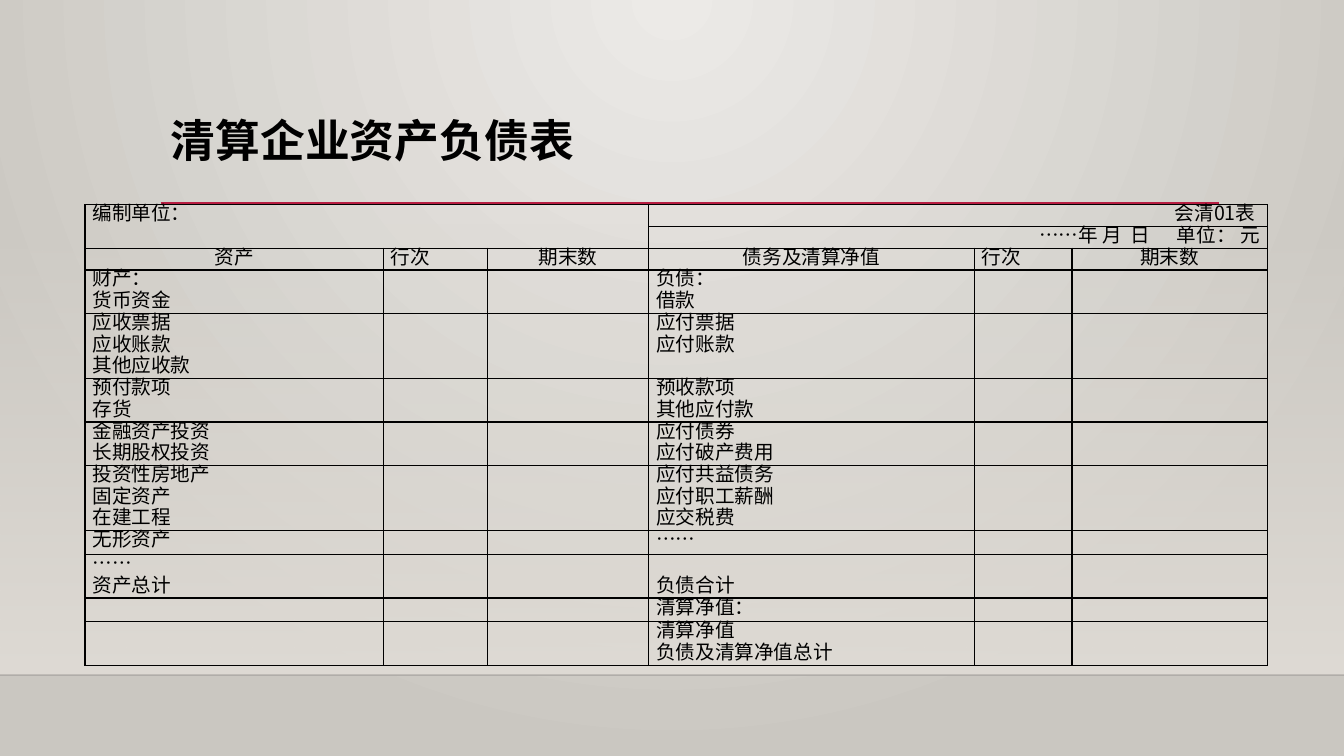
from lxml.etree import SubElement
from pptx import Presentation
from pptx.dml.color import RGBColor
from pptx.enum.shapes import MSO_CONNECTOR, MSO_SHAPE
from pptx.enum.text import MSO_ANCHOR, MSO_AUTO_SIZE, PP_ALIGN
from pptx.oxml.ns import qn
from pptx.util import Pt

PX = 9525
FACE = "Noto Sans CJK SC"
HUES = {
    "ink": "000000",
    "glow": "ECEAE7",
    "edge": "CAC7C1",
    "wall": "DFDBD5",
    "floor": "000001",
    "red": "B71E42",
}
COLS = [284, 99, 154, 310, 93, 186]
HEADS = ["资产", "行次", "期末数", "债务及清算净值", "行次", "期末数"]
ITEMS = [
    (["财产：", "货币资金"], ["负债：", "借款"]),
    (["应收票据", "应收账款", "其他应收款"], ["应付票据", "应付账款"]),
    (["预付款项", "存货"], ["预收款项", "其他应付款"]),
    (["金融资产投资", "长期股权投资"], ["应付债券", "应付破产费用"]),
    (["投资性房地产", "固定资产", "在建工程"], ["应付共益债务", "应付职工薪酬", "应交税费"]),
    (["无形资产"], ["……"]),
    (["……", "资产总计"], ["负债合计"]),
    ([], ["清算净值："]),
    ([], ["清算净值", "负债及清算净值总计"]),
]
DATE = [("……年 月", 0), (" ", 300), ("日", 0), (" ", 1570), ("单位： 元", 0)]


def hue(name):
    return RGBColor.from_string(HUES[name])


def add_run(par, text, size, bold=False, gap=0):
    run = par.add_run()
    run.text = text
    font = run.font
    font.size, font.bold, font.name = Pt(size), bold, FACE
    font.color.rgb = hue("ink")
    props = run._r.get_or_add_rPr()
    SubElement(props, qn("a:ea"), typeface=FACE)
    if gap:
        props.set("spc", str(gap))


def blend(fill, first, last):
    fill.gradient()
    for stop, name, place in zip(fill.gradient_stops, (first, last), (0, 1)):
        stop.color.rgb = hue(name)
        stop.position = place


def fade(node, share):
    tint = next(node.iter(qn("a:srgbClr")))
    SubElement(tint, qn("a:alpha"), val=str(share * 1000))


def draw_rule(slide, left, top, width, name, weight):
    rule = slide.shapes.add_connector(
        MSO_CONNECTOR.STRAIGHT, left * PX, top * PX, (left + width) * PX, top * PX)
    rule.line.color.rgb = hue(name)
    rule.line.width = Pt(weight)
    SubElement(rule.element.spPr, qn("a:effectLst"))
    return rule


def draw_scene(slide, width, base):
    blend(slide.background.fill, "glow", "edge")
    lin = next(slide.element.iter(qn("a:lin")))
    grad = lin.getparent()
    grad.remove(lin)
    ring = SubElement(grad, qn("a:path"), path="circle")
    SubElement(ring, qn("a:fillToRect"), l="43000", t="0", r="43000", b="100000")
    top = 212
    wall = slide.shapes.add_shape(
        MSO_SHAPE.RECTANGLE, 0, top * PX, width * PX, (base - top) * PX)
    wall.shadow.inherit = False
    wall.line.fill.background()
    blend(wall.fill, "wall", "wall")
    wall.fill.gradient_angle = 270
    fade(wall.element.spPr, 0)
    floor = draw_rule(slide, 0, base, width, "floor", 1)
    fade(floor.element.spPr, 20)


def draw_title(slide, left, top, width, height):
    draw_rule(slide, left, top + height + 26, width, "red", 2.5)
    title = slide.shapes.title
    slide.shapes.element.append(title.element)
    title.left, title.top = left * PX, top * PX
    title.width, title.height = width * PX, height * PX
    frame = title.text_frame
    frame.auto_size = MSO_AUTO_SIZE.NONE
    frame.word_wrap = True
    frame.vertical_anchor = MSO_ANCHOR.BOTTOM
    frame.margin_bottom = 9 * PX
    par = frame.paragraphs[0]
    par.alignment = PP_ALIGN.LEFT
    par.line_spacing = 0.9
    add_run(par, "清算企业资产负债表", 32, True)


def style_cell(cell):
    cell.margin_left = cell.margin_right = 7 * PX
    cell.margin_top = cell.margin_bottom = 0
    props = cell._tc.get_or_add_tcPr()
    for side in ("lnL", "lnR", "lnT", "lnB"):
        line = SubElement(props, qn("a:" + side), w=str(Pt(1)))
        fill = SubElement(line, qn("a:solidFill"))
        SubElement(fill, qn("a:srgbClr"), val=HUES["ink"])
    cell.fill.background()


def fill_cell(cell, lines, align):
    frame = cell.text_frame
    for spot, runs in enumerate(lines or [[]]):
        par = frame.add_paragraph() if spot else frame.paragraphs[0]
        par.alignment = align
        par.line_spacing = Pt(15.5)
        for text, gap in runs:
            add_run(par, text, 14, gap=gap)
        if not runs:
            SubElement(par._p, qn("a:endParaRPr"), sz="1400")


def plain(lines):
    return [[(text, 0)] for text in lines]


def draw_sheet(slide, left, top):
    sizes = [1, 1, 1] + [max(map(len, pair)) for pair in ITEMS]
    highs = [62 * size // 3 for size in sizes]
    frame = slide.shapes.add_table(
        len(highs), len(COLS), left * PX, top * PX, sum(COLS) * PX, sum(highs) * PX)
    table = frame.table
    table.first_row = table.horz_banding = False
    for col, width in zip(table.columns, COLS):
        col.width = width * PX
    for row, high in zip(table.rows, highs):
        row.height = high * PX
        for cell in row.cells:
            style_cell(cell)
    for start, end in (((0, 0), (1, 2)), ((0, 3), (0, 5)), ((1, 3), (1, 5))):
        table.cell(*start).merge(table.cell(*end))
    fill_cell(table.cell(0, 0), plain(["编制单位："]), PP_ALIGN.LEFT)
    fill_cell(table.cell(0, 3), plain(["会清01表 "]), PP_ALIGN.RIGHT)
    fill_cell(table.cell(1, 3), [DATE], PP_ALIGN.RIGHT)
    for col, head in enumerate(HEADS):
        align = PP_ALIGN.JUSTIFY if head == "行次" else PP_ALIGN.CENTER
        fill_cell(table.cell(2, col), plain([head]), align)
    for row, (assets, debts) in enumerate(ITEMS, 3):
        for col, lines in enumerate((assets, [], [], debts, [], [])):
            cell = table.cell(row, col)
            fill_cell(cell, plain(lines), PP_ALIGN.JUSTIFY)
            if lines == ["负债合计"]:
                cell.vertical_anchor = MSO_ANCHOR.BOTTOM


def main():
    deck = Presentation()
    deck.slide_width, deck.slide_height = 1280 * PX, 720 * PX
    slide = deck.slides.add_slide(deck.slide_layouts[5])
    draw_scene(slide, 1280, 643)
    draw_title(slide, 153, 58, 1008, 110)
    draw_sheet(slide, 81, 195)
    deck.save("out.pptx")


if __name__ == "__main__":
    main()
